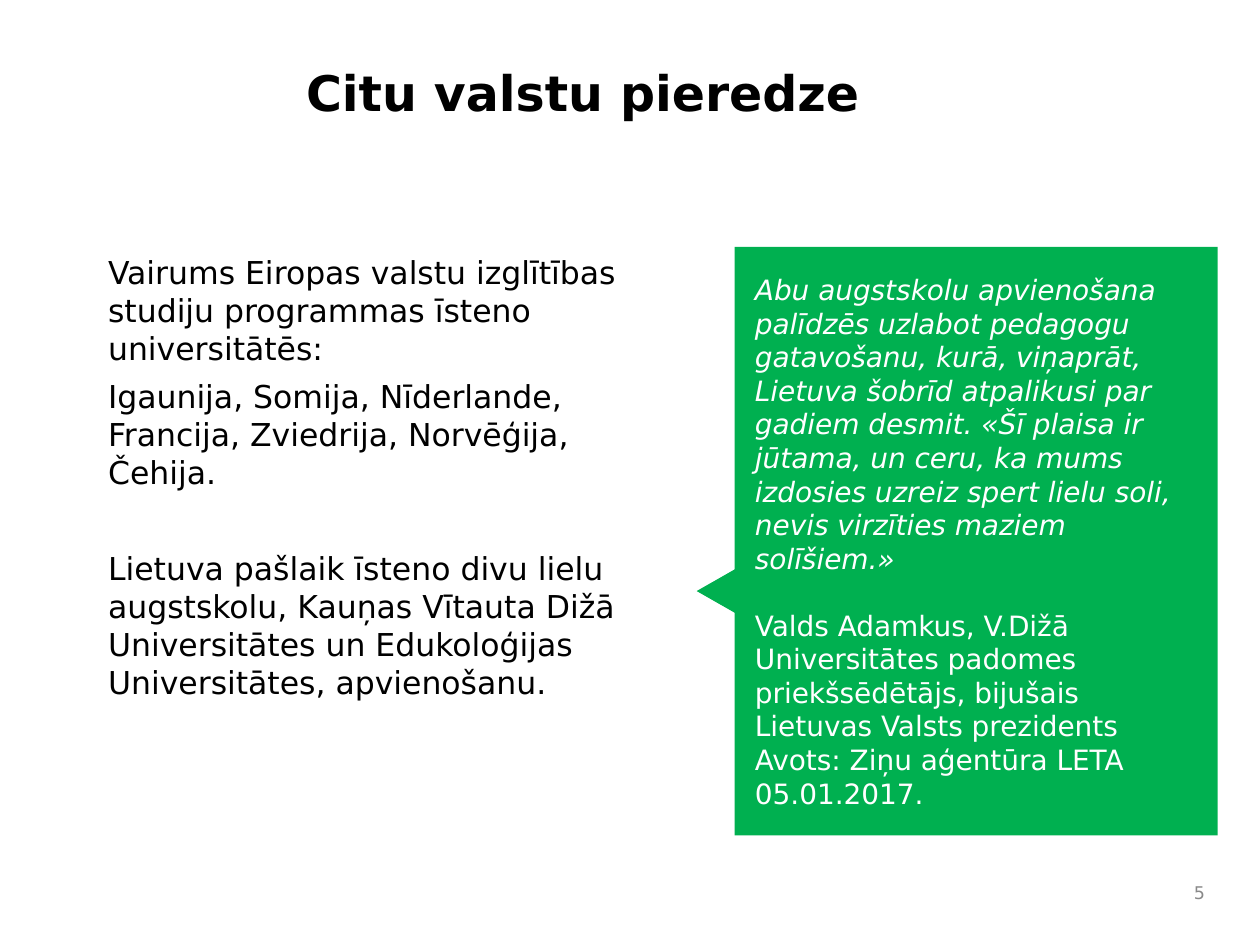
from dataclasses import dataclass

from pptx import Presentation
from pptx.dml.color import RGBColor
from pptx.enum.shapes import MSO_SHAPE
from pptx.enum.text import MSO_ANCHOR, PP_ALIGN
from pptx.util import Cm, Pt

FONT = "DejaVu Sans"
COLORS = {"text": "000000", "number": "898989", "quote": "00B050", "quote_text": "FFFFFF"}


@dataclass
class Box:
    left: float
    top: float
    width: float
    height: float

    def lengths(self) -> tuple:
        return Cm(self.left), Cm(self.top), Cm(self.width), Cm(self.height)


@dataclass
class Para:
    text: str
    before: float = 0
    italic: bool = False


@dataclass
class Style:
    size: float
    color: str
    bold: bool = False
    align: PP_ALIGN = PP_ALIGN.LEFT
    anchor: MSO_ANCHOR = MSO_ANCHOR.TOP
    after: float = 0
    inset: float = 0.25


def write(sp, paras: list[Para], style: Style) -> None:
    tf = sp.text_frame
    tf.word_wrap = True
    tf.vertical_anchor = style.anchor
    tf.margin_left, tf.margin_right = Cm(style.inset), Cm(0.25)
    tf.margin_top = tf.margin_bottom = Cm(0.13)
    for i, para in enumerate(paras):
        p = tf.paragraphs[0] if i == 0 else tf.add_paragraph()
        p.text = para.text
        p.alignment = style.align
        p.space_before, p.space_after = Pt(para.before), Pt(style.after)
        for r in p.runs:
            r.font.name, r.font.size = FONT, Pt(style.size)
            r.font.bold, r.font.italic = style.bold, para.italic
            r.font.color.rgb = RGBColor.from_string(COLORS[style.color])


def add_text(s, box: Box, paras: list[Para], style: Style) -> None:
    write(s.shapes.add_textbox(*box.lengths()), paras, style)


def add_solid(shapes, kind: MSO_SHAPE, box: Box, color: str):
    """Add a filled shape without outline or shadow."""
    sp = shapes.add_shape(kind, *box.lengths())
    sp.shadow.inherit = False
    sp.fill.solid()
    sp.fill.fore_color.rgb = RGBColor.from_string(COLORS[color])
    sp.line.fill.background()
    return sp


BODY = [
    Para("Vairums Eiropas valstu izglītības studiju programmas īsteno universitātēs:"),
    Para("Igaunija, Somija, Nīderlande, Francija, Zviedrija, Norvēģija, Čehija."),
    Para("Lietuva pašlaik īsteno divu lielu augstskolu, Kauņas Vītauta Dižā "
         "Universitātes un Edukoloģijas Universitātes, apvienošanu.", before=27.5),
]
QUOTE = [
    Para("Abu augstskolu apvienošana palīdzēs uzlabot pedagogu gatavošanu, kurā, "
         "viņaprāt, Lietuva šobrīd atpalikusi par gadiem desmit. «Šī plaisa ir jūtama, "
         "un ceru, ka mums izdosies uzreiz spert lielu soli, nevis virzīties maziem "
         "solīšiem.»", italic=True),
    Para("Valds Adamkus, V.Dižā Universitātes padomes priekšsēdētājs, bijušais "
         "Lietuvas Valsts prezidents", before=19),
    Para("Avots: Ziņu aģentūra LETA 05.01.2017."),
]


def main() -> None:
    prs = Presentation()
    prs.slide_width, prs.slide_height = Cm(25.4), Cm(19.05)
    s = prs.slides.add_slide(prs.slide_layouts[6])

    add_text(s, Box(23.7, 17.58, 0.84, 0.84), [Para("5")],
             Style(10, "number", align=PP_ALIGN.RIGHT, anchor=MSO_ANCHOR.MIDDLE))
    add_text(s, Box(5.92, 1.14, 18.64, 2.87), [Para("Citu valstu pieredze")],
             Style(28, "text", bold=True))
    add_text(s, Box(1.93, 4.98, 11.18, 9.96), BODY, Style(18, "text", after=6))

    callout = s.shapes.add_group_shape().shapes
    panel = add_solid(callout, MSO_SHAPE.RECTANGLE, Box(14.81, 4.98, 9.74, 11.86), "quote")
    write(panel, QUOTE, Style(16, "quote_text", anchor=MSO_ANCHOR.MIDDLE, inset=0.41))
    pointer = add_solid(callout, MSO_SHAPE.ISOSCELES_TRIANGLE,
                        Box(13.97, 11.38, 1.22, 1.07), "quote")
    pointer.rotation = 270

    prs.save("out.pptx")


if __name__ == "__main__":
    main()
